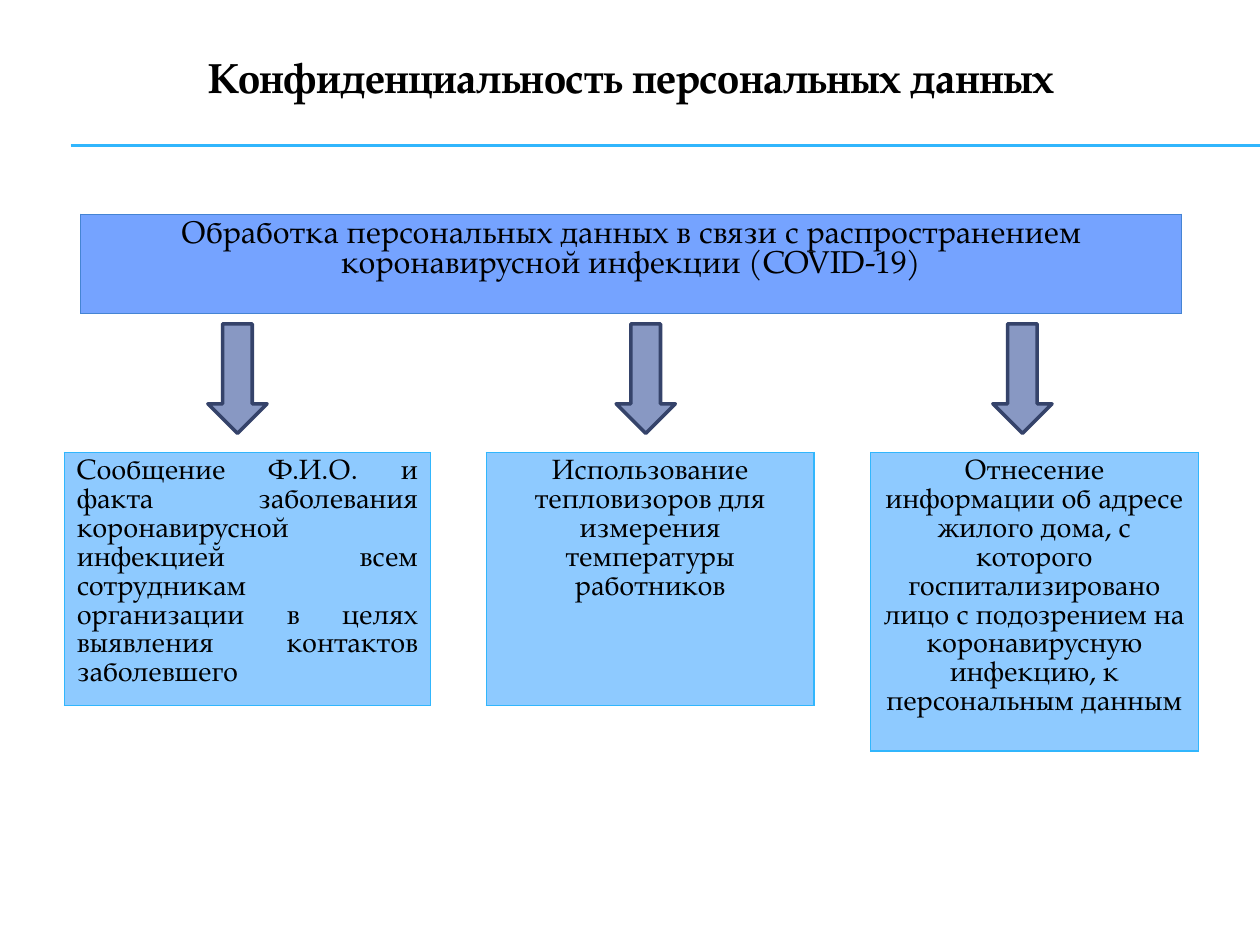
from lxml import etree
from pptx import Presentation
from pptx import util as u
from pptx.dml.color import RGBColor
from pptx.enum import shapes, text
from pptx.oxml import ns

CENTER = text.PP_ALIGN.CENTER
JUSTIFY = text.PP_ALIGN.JUSTIFY


def colour(value):
    return RGBColor.from_string(value)


def add_element(parent, tag, **attributes):
    return etree.SubElement(parent, ns.qn(tag), attributes)


class Page:
    """The current slide and its style."""
    font = "TeX Gyre Pagella"
    ink = "000000"
    sky = "31B6FD"

    def __init__(self, deck):
        self.shapes = deck.slides.add_slide(deck.slide_layouts[6]).shapes

    def set_words(self, frame, words, size, align=CENTER, bold=False, spacing=None):
        frame.word_wrap = True
        para = frame.paragraphs[0]
        para.text = words
        para.alignment = align
        if spacing:
            para.line_spacing = u.Pt(spacing)
        para.font.name = self.font
        para.font.size = u.Pt(size)
        para.font.bold = bold
        para.font.color.rgb = colour(self.ink)

    def title(self, words, *place):
        box = self.shapes.add_textbox(*map(u.Inches, place))
        self.set_words(box.text_frame, words, 24, bold=True)

    def rule(self, left, right, y):
        line = self.shapes.add_connector(
            shapes.MSO_CONNECTOR.STRAIGHT,
            u.Inches(left), u.Inches(y), u.Inches(right), u.Inches(y))
        line.line.color.rgb = colour(self.sky)
        line.line.width = u.Pt(0.75)
        add_element(line._element.spPr, "a:effectLst")

    def arrow(self, *place):
        arrow = self.shapes.add_shape(shapes.MSO_SHAPE.DOWN_ARROW, *map(u.Inches, place))
        arrow.shadow.inherit = False
        arrow.fill.solid()
        arrow.fill.fore_color.rgb = colour("8898C3")
        arrow.line.color.rgb = colour("35436A")
        arrow.line.width = u.Pt(2)

    def panel(self, words, place, fill, border, size, spacing, align=CENTER, top=0.05):
        """Add a bordered table of one cell."""
        table = self.shapes.add_table(1, 1, *map(u.Inches, place)).table
        cell = table.cell(0, 0)
        cell.margin_left = cell.margin_right = u.Inches(0.1)
        cell.margin_top = u.Inches(top)
        cell.margin_bottom = u.Inches(0.05)
        self.set_words(cell.text_frame, words, size, align, spacing=spacing)
        properties = cell._tc.get_or_add_tcPr()
        for side in "LRTB":
            edge = add_element(properties, f"a:ln{side}", w=str(u.Pt(0.79)))
            add_element(add_element(edge, "a:solidFill"), "a:srgbClr", val=border)
        cell.fill.solid()
        cell.fill.fore_color.rgb = colour(fill)


def main():
    deck = Presentation()
    deck.slide_width, deck.slide_height = u.Inches(10), u.Inches(7.5)
    page = Page(deck)

    for y in (1.15, 1.16):
        page.rule(0.56, 10, y)
    page.title("Конфиденциальность персональных данных", 0.51, 0.36, 9, 0.61)
    page.panel("Обработка персональных данных в связи с распространением "
               "коронавирусной инфекции (COVID-19)",
               (0.64, 1.7, 8.74, 0.79), "75A3FF", "4584D3", 18, 17, top=0.07)

    cases = [
        (0.51, 2.91, 2.01, 1.65, JUSTIFY,
         "Cообщение Ф.И.О. и факта заболевания коронавирусной инфекцией всем "
         "сотрудникам организации в целях выявления контактов заболевшего"),
        (3.86, 2.6, 2.01, 4.89, CENTER,
         "Использование тепловизоров для измерения температуры работников"),
        (6.91, 2.6, 2.37, 7.88, CENTER,
         "Отнесение информации об адресе жилого дома, с которого "
         "госпитализировано лицо с подозрением на коронавирусную инфекцию, "
         "к персональным данным"),
    ]
    for left, width, height, arrow_left, align, words in cases:
        page.arrow(arrow_left, 2.57, 0.47, 0.87)
        page.panel(words, (left, 3.59, width, height), "8ECAFF", page.sky, 16, 16.5, align)

    deck.save("out.pptx")


if __name__ == "__main__":
    main()
